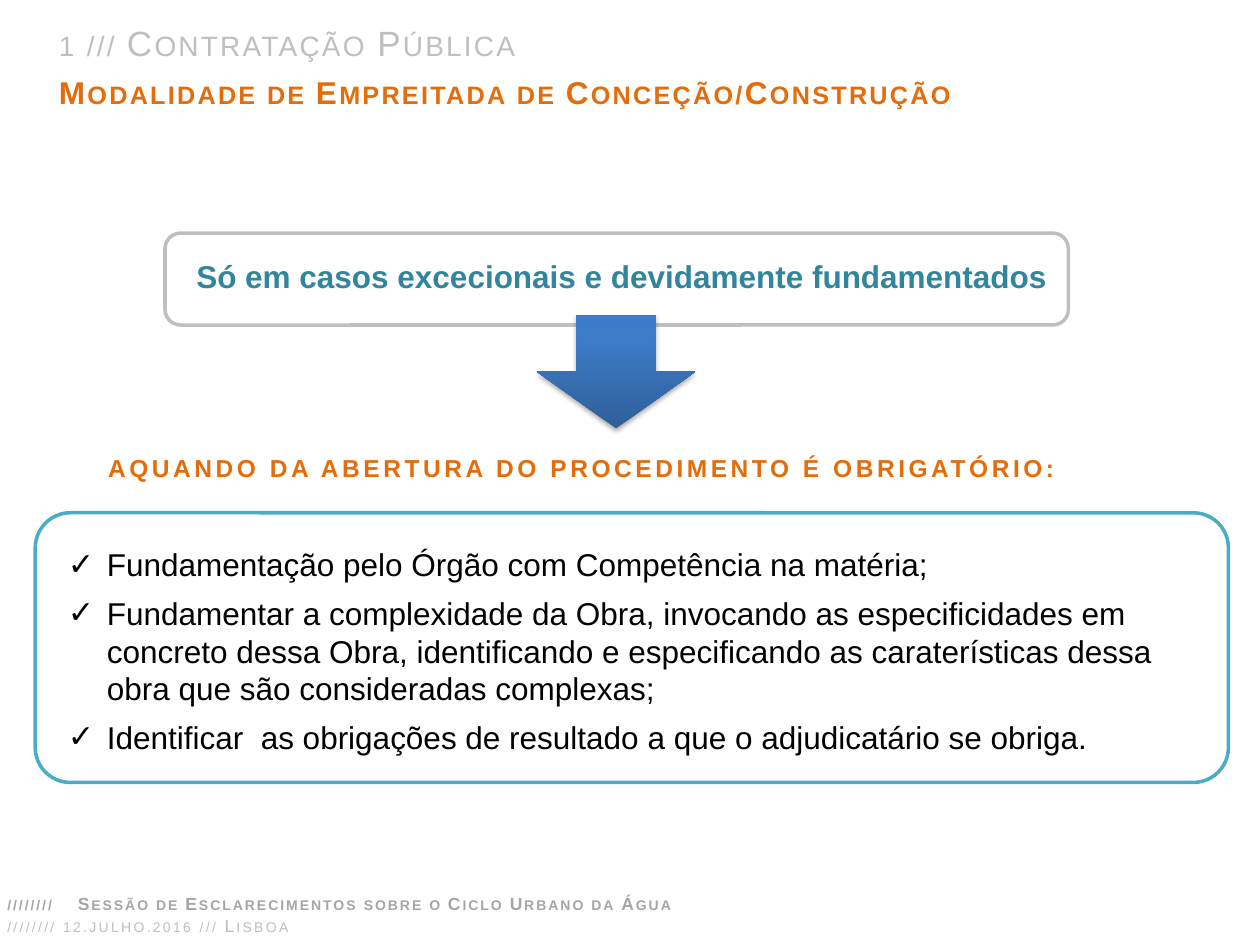
from lxml.etree import SubElement
from pptx import Presentation
from pptx.dml.color import RGBColor as RGB
from pptx.enum.shapes import MSO_SHAPE as SHAPE
from pptx.oxml import parse_xml
from pptx.oxml.ns import nsdecls, qn
from pptx.util import Inches, Pt

COLORS = {
    "white": "FFFFFF", "black": "000000", "silver": "BFBFBF", "gray": "A6A6A6",
    "orange": "E46C0A", "teal": "31859C", "aqua": "4BACC6",
}

prs = Presentation()
prs.slide_width, prs.slide_height = Inches(10), Inches(7.5)
slide = prs.slides.add_slide(prs.slide_layouts[6])

# Grid of 100 columns by 75 rows
COL, ROW = prs.slide_width // 100, prs.slide_height // 75


def place(x, y, w, h):
    return [round(v) for v in (x * COL, y * ROW, w * COL, h * ROW)]


def add_text(text, box, size=18, color="black", bold=False, spacing=0,
             small=False, after=0, bullet=None, tab=None):
    """Add a text box with one paragraph for each line of the text."""
    tf = slide.shapes.add_textbox(*place(*box)).text_frame
    tf.word_wrap = True
    for i, line in enumerate(text.split("\n")):
        p = tf.paragraphs[0] if i == 0 else tf.add_paragraph()
        p.space_after = Pt(after)
        r = p.add_run()
        r.text = line
        r.font.name, r.font.size, r.font.bold = "Arial", Pt(size), bold
        r.font.color.rgb = RGB.from_string(COLORS[color])
        rpr, ppr = r.font._element, p._p.get_or_add_pPr()
        if spacing:
            rpr.set("spc", str(round(spacing * 100)))
        if small:
            rpr.set("cap", "small")
        if bullet:
            indent = round(3.1 * COL)
            ppr.set("marL", str(indent))
            ppr.set("indent", str(-indent))
            SubElement(ppr, qn("a:buFont"), typeface="Arial")
            SubElement(ppr, qn("a:buChar"), char=bullet)
        if tab:
            stops = SubElement(ppr, qn("a:tabLst"))
            SubElement(stops, qn("a:tab"), pos=str(round(tab * COL)), algn="l")


# Rounded frames
frames = [
    ((13.1, 18.5, 71.7, 7.3), "silver", 0.17),
    ((2.8, 40.7, 94.7, 21.4), "aqua", 0.13),
]
for box, color, corner in frames:
    s = slide.shapes.add_shape(SHAPE.ROUNDED_RECTANGLE, *place(*box))
    s.shadow.inherit = False
    s.adjustments[0] = corner
    s.fill.solid()
    s.fill.fore_color.rgb = RGB.from_string(COLORS["white"])
    s.line.color.rgb = RGB.from_string(COLORS[color])
    s.line.width = Pt(2)

# Arrow between the frames, with a gradient and a soft shadow
s = slide.shapes.add_shape(SHAPE.DOWN_ARROW, *place(42.6, 25, 12.6, 9))
s.line.fill.background()
s.shadow.inherit = False
stops = "".join(
    f'<a:gs pos="{pos * 1000}"><a:srgbClr val="{color}"/></a:gs>'
    for pos, color in [(0, "2F5F99"), (80, "3D7CC7"), (100, "3A7CCB")])
sppr = s._element.spPr
sppr.find(qn("a:ln")).addprevious(parse_xml(
    f'<a:gradFill {nsdecls("a")} rotWithShape="1"><a:gsLst>{stops}</a:gsLst>'
    '<a:lin ang="16200000" scaled="0"/></a:gradFill>'))
sppr.find(qn("a:effectLst")).append(parse_xml(
    f'<a:outerShdw {nsdecls("a")} blurRad="{Pt(3.1)}" dist="{Pt(1.8)}" '
    f'dir="5400000" rotWithShape="0"><a:srgbClr val="{COLORS["black"]}">'
    '<a:alpha val="35000"/></a:srgbClr></a:outerShdw>'))

# Headings
add_text("1 /// Contratação Pública", (3.7, 1.2, 96.3, 4.4), size=20,
         color="silver", spacing=1.3, small=True, after=6)
add_text("Modalidade de Empreitada de Conceção/Construção",
         (3.7, 5.3, 86.4, 4), color="orange", bold=True, spacing=1.3,
         small=True, after=6)

# Condition and its requirements
add_text("Só em casos excecionais e devidamente fundamentados",
         (14.6, 19.9, 71.7, 4), color="teal", bold=True)
add_text("AQUANDO DA ABERTURA DO PROCEDIMENTO É OBRIGATÓRIO:",
         (7.6, 35.5, 80, 3.3), size=14, color="orange", bold=True, spacing=2)
add_text("Fundamentação pelo Órgão com Competência na matéria;\n"
         "Fundamentar a complexidade da Obra, invocando as especificidades em "
         "concreto dessa Obra, identificando e especificando as caraterísticas "
         "dessa obra que são consideradas complexas;\n"
         "Identificar  as obrigações de resultado a que o adjudicatário se "
         "obriga.",
         (4.4, 42.8, 89, 17.8), after=6, bullet="✓")

# Footer
add_text("//////// 12.julho.2016 /// Lisboa", (-0.4, 72.1, 77.4, 2.7),
         size=10, color="silver", spacing=1.3, small=True)
add_text("////////\tSessão de Esclarecimentos sobre o Ciclo Urbano da Água",
         (-0.4, 70.4, 77.4, 2.7), size=10, color="gray", bold=True,
         spacing=1.1, small=True, tab=5.6)

prs.save("out.pptx")
